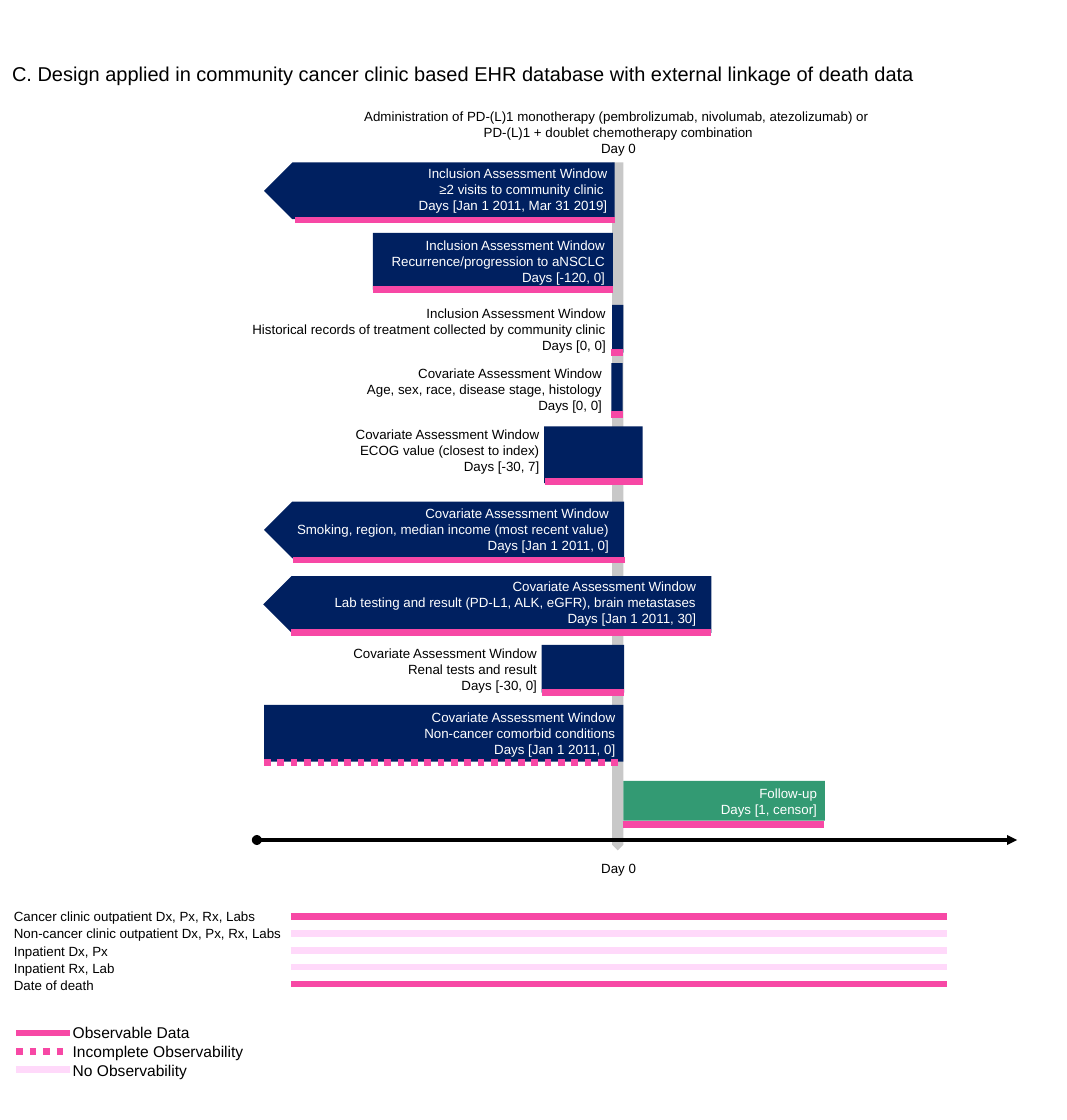
from lxml.etree import SubElement
from pptx import Presentation
from pptx.dml.color import RGBColor
from pptx.enum.dml import MSO_LINE
from pptx.enum.shapes import MSO_CONNECTOR, MSO_SHAPE
from pptx.enum.text import MSO_ANCHOR, PP_ALIGN
from pptx.oxml.ns import qn
from pptx.util import Pt

NAVY = RGBColor(0x00, 0x20, 0x60)
GREEN = RGBColor(0x33, 0x9A, 0x73)
GREY = RGBColor(0xC8, 0xC8, 0xC8)
PINK = RGBColor(0xF7, 0x48, 0xA5)
PALE = RGBColor(0xFF, 0xD9, 0xFA)
BLACK = RGBColor(0x00, 0x00, 0x00)
WHITE = RGBColor(0xFF, 0xFF, 0xFF)

RECT, PLATE = MSO_SHAPE.RECTANGLE, MSO_SHAPE.PENTAGON
INCL, COVAR = "Inclusion Assessment Window", "Covariate Assessment Window"

# Each window: shape, box, fill, ink, label offset and width, rule offsets, dotted, lines
WINDOWS = [
    (PLATE, (237.6, 146.2, 315.4, 51.1), NAVY, WHITE, (57.6, -1.5, 258.5), (28.1, 0.7, 0.7), False,
     [INCL, "≥2 visits to community clinic ", "Days [Jan 1 2011, Mar 31 2019]"]),
    (RECT, (335.5, 209.5, 216, 51.1), NAVY, WHITE, None, (0, 0, 0), False,
     [INCL, "Recurrence/progression to aNSCLC", "Days [-120, 0]"]),
    (RECT, (550.8, 274.3, 10.1, 43.2), NAVY, BLACK, (-333.4, -3.6, 334.8), (-0.7, 0, 0), False,
     [INCL, "Historical records of treatment collected by community clinic", " Days [0, 0]"]),
    (RECT, (550.1, 326.9, 10.1, 43.2), NAVY, BLACK, (-266.4, -1.5, 265), (0, 0.7, 2.9), False,
     [COVAR, "Age, sex, race, disease stage, histology", "Days [0, 0]"]),
    (RECT, (489.6, 383.8, 88.6, 51.1), NAVY, BLACK, (-227.5, -3.6, 230.4), (0.7, 0, -1.5), False,
     [COVAR, "ECOG value (closest to index)", "Days [-30, 7]"]),
    (PLATE, (237.6, 451.4, 324, 51.1), NAVY, WHITE, (-5.8, 0, 323.3), (25.9, 0.7, 1.5), False,
     [COVAR, "Smoking, region, median income (most recent value)", "Days [Jan 1 2011, 0]"]),
    (PLATE, (236.9, 518.4, 403.2, 51.1), NAVY, WHITE, (0, -1.4, 396.7), (25.2, 0, 0), False,
     [COVAR, "Lab testing and result (PD-L1, ALK, eGFR), brain metastases", "Days [Jan 1 2011, 30]"]),
    (RECT, (487.4, 580.3, 74.2, 43.2), NAVY, BLACK, (-242.6, -3.6, 245.5), (0, 0, 0), False,
     [COVAR, "Renal tests and result", "Days [-30, 0]"]),
    (RECT, (237.6, 634.3, 323.3, 51.1), NAVY, WHITE, None, (0, 0.7, 0.8), True,
     [COVAR, "Non-cancer comorbid conditions", "Days [Jan 1 2011, 0]"]),
    (RECT, (560.9, 702.7, 181.4, 36), GREEN, WHITE, None, (-0.7, -0.7, 3.6), False,
     ["Follow-up", "Days [1, censor]"]),
]
SOURCES = [("Cancer clinic outpatient Dx, Px, Rx, Labs", PINK, False),
           ("Non-cancer clinic outpatient Dx, Px, Rx, Labs", PALE, False),
           ("Inpatient Dx, Px", PALE, False),
           ("Inpatient Rx, Lab", PALE, False),
           ("Date of death", PINK, False)]
LEGEND = [("Observable Data", PINK, False),
          ("Incomplete Observability", PINK, True),
          ("No Observability", PALE, False)]


def write(frame, lines, size, ink, align, wrap=True):
    """Fill a text frame with one run per paragraph."""
    frame.word_wrap = wrap
    frame.vertical_anchor = MSO_ANCHOR.TOP
    for i, line in enumerate(lines):
        para = frame.paragraphs[0] if i == 0 else frame.add_paragraph()
        para.alignment = align
        run = para.add_run()
        run.text = line
        run.font.name, run.font.size = "Arial", Pt(size)
        run.font.color.rgb = ink


def note(slide, box, lines, size=12, ink=BLACK, align=PP_ALIGN.LEFT, wrap=True):
    """Add a text box."""
    frame = slide.shapes.add_textbox(*map(Pt, box)).text_frame
    write(frame, lines, size, ink, align, wrap)


def block(slide, kind, box, fill):
    """Add a flat filled shape without outline."""
    shape = slide.shapes.add_shape(kind, *map(Pt, box))
    shape.shadow.inherit = False
    shape.fill.solid()
    shape.fill.fore_color.rgb = fill
    shape.line.fill.background()
    return shape


def rule(slide, left, right, y, ink, width=6, dotted=False):
    """Add a level line."""
    line = slide.shapes.add_connector(MSO_CONNECTOR.STRAIGHT, Pt(left), Pt(y), Pt(right), Pt(y))
    line.line.color.rgb = ink
    line.line.width = Pt(width)
    if dotted:
        line.line.dash_style = MSO_LINE.ROUND_DOT
    SubElement(line.element.spPr, qn("a:effectLst"))
    return line


def head(slide, box, text):
    """Place and format the title."""
    title = slide.shapes.title
    title.left, title.top, title.width, title.height = map(Pt, box)
    write(title.text_frame, [text], 18, BLACK, PP_ALIGN.LEFT)
    title.text_frame.vertical_anchor = MSO_ANCHOR.BOTTOM


def index(slide, box):
    """Draw the upright day-zero band with its captions."""
    x, y, w, h = box
    mid = x + w / 2
    band = block(slide, PLATE, (mid - h / 2, y + h / 2 - w / 2, h, w), GREY)
    band.rotation = 90
    note(slide, (mid - 237, y - 52.6, 475.2, 51.1),
         ["Administration of PD-(L)1 monotherapy (pembrolizumab, nivolumab, atezolizumab) or ",
          "PD-(L)1 + doublet chemotherapy combination", "Day 0"],
         align=PP_ALIGN.CENTER, wrap=False)
    note(slide, (mid - 239, y + h + 5, 479.5, 21.6), ["Day 0"], align=PP_ALIGN.CENTER)


def window(slide, kind, box, fill, ink, label, edge, dotted, lines):
    """Draw one assessment window with its label and observability rule."""
    x, y, w, h = box
    bar = block(slide, kind, box, fill)
    if kind == PLATE:
        bar.element.spPr.xfrm.set("flipH", "1")
    if label:
        dx, dy, wide = label
        note(slide, (x + dx, y + dy, wide, 51.1), lines, ink=ink, align=PP_ALIGN.RIGHT)
    else:
        write(bar.text_frame, lines, 12, ink, PP_ALIGN.RIGHT)
    start, end, drop = edge
    rule(slide, x + start, x + w + end, y + h + drop, PINK, dotted=dotted)


def axis(slide, left, right, y):
    """Draw the time axis."""
    line = rule(slide, left, right, y, BLACK, 3)
    ends = line.line._get_or_add_ln()
    SubElement(ends, qn("a:headEnd"), type="oval")
    SubElement(ends, qn("a:tailEnd"), type="triangle")


def rows(slide, box, items, size, step, bar):
    """List captions, each with its line."""
    x, y, w, h = box
    left, right, drop, pitch = bar
    for i, (text, ink, dotted) in enumerate(items):
        note(slide, (x, y + i * step, w, h), [text], size, wrap=False)
        rule(slide, x + left, x + right, y + drop + i * pitch, ink, dotted=dotted)


def main():
    """Build the study design slide."""
    deck = Presentation()
    deck.slide_width, deck.slide_height = Pt(960), Pt(1008)
    slide = deck.slides.add_slide(deck.slide_layouts[5])
    head(slide, (3.6, 8.6, 857.5, 72),
         "C. Design applied in community cancer clinic based EHR database with external linkage of death data")
    index(slide, (550.8, 146.2, 10.1, 619.2))
    axis(slide, 231.1, 915.1, 756)
    for item in WINDOWS:
        window(slide, *item)
    rows(slide, (5.4, 814, 257, 21.6), SOURCES, 12, 15.5, (256.3, 846.7, 11.1, 15.12))
    rows(slide, (58.3, 917.3, 169.2, 24.5), LEGEND, 14, 16.9, (-43.5, 4.5, 12.5, 16.5))
    deck.save("out.pptx")


if __name__ == "__main__":
    main()
